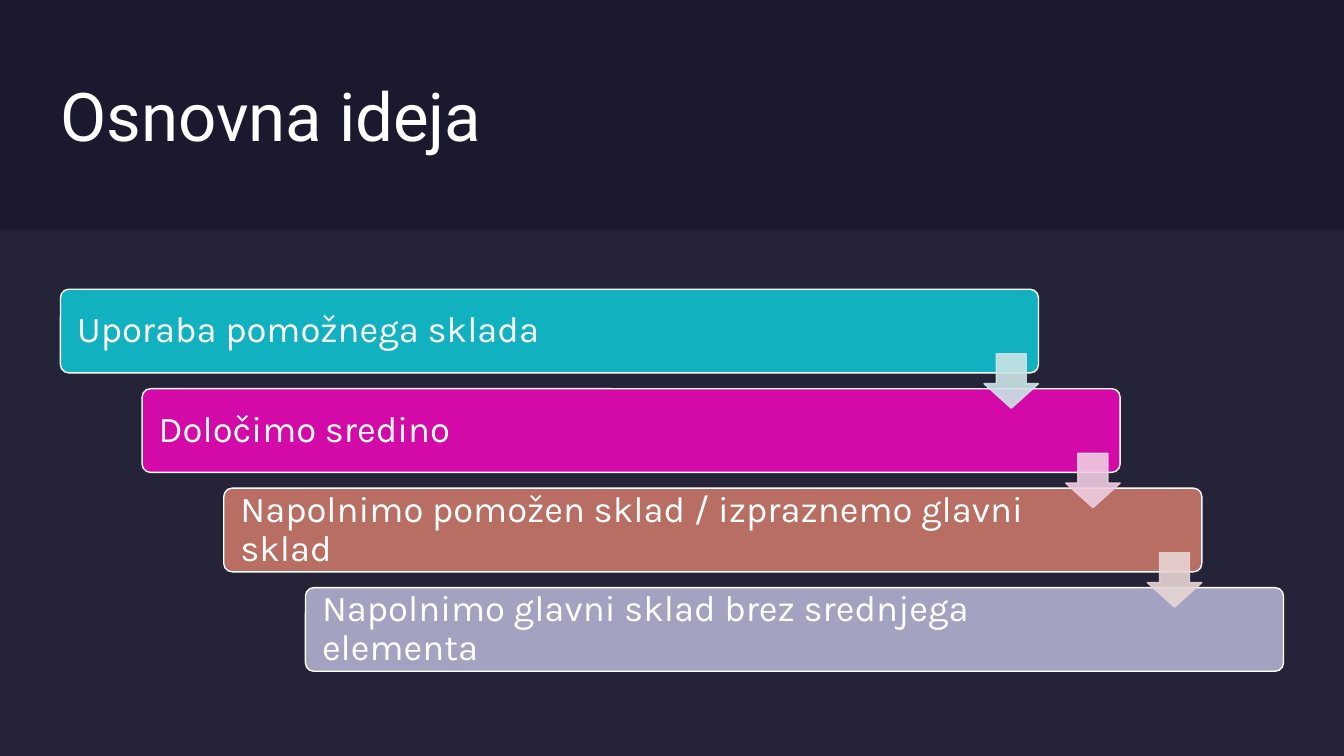
from pptx import Presentation
from pptx import util as u
from pptx.dml.color import RGBColor
from pptx.enum import shapes, text
from pptx.oxml.ns import qn
from lxml import etree

COLORS = {
    "night": "1B192E", "panel": "E4E3F0", "white": "FFFFFF",
    "teal": "12B1BF", "magenta": "D40AA8", "clay": "B86E62", "lilac": "A3A3C1",
    "pale_teal": "CCE4E8", "pale_magenta": "EFCCE1", "pale_clay": "E6D5D3",
}
STEPS = [
    ("Uporaba pomožnega sklada", "teal", "pale_teal"),
    ("Določimo sredino", "magenta", "pale_magenta"),
    ("Napolnimo pomožen sklad / izpraznemo glavni sklad", "clay", "pale_clay"),
    ("Napolnimo glavni sklad brez srednjega elementa", "lilac", None),
]
LEFT, TOP = 0.6, 2.87
STEP_X, STEP_Y = 0.81, (5.83 - TOP) / 3


class StepSlide:
    title_font, body_font = "Roboto", "Karla"

    def __init__(self, prs):
        self.s = prs.slides.add_slide(prs.slide_layouts[5])
        self.paint(self.s.background.fill, "night")

    def paint(self, fill, color, opacity=100):
        fill.solid()
        fill.fore_color.rgb = RGBColor.from_string(COLORS[color])
        if opacity < 100:
            clr = fill._xPr.find(qn("a:solidFill"))[0]
            etree.SubElement(clr, qn("a:alpha"), val=str(opacity * 1000))

    def add_text(self, p, words, font, size):
        p.alignment = text.PP_ALIGN.LEFT
        r = p.add_run()
        r.text = words
        r.font.name, r.font.size = font, u.Pt(size)
        self.paint(r.font.fill, "white")

    def frame(self, sp, left, top, right, bottom):
        tf = sp.text_frame
        tf.word_wrap = True
        tf.auto_size = text.MSO_AUTO_SIZE.NONE
        tf.vertical_anchor = text.MSO_ANCHOR.MIDDLE
        tf.margin_left, tf.margin_top = u.Inches(left), u.Inches(top)
        tf.margin_right, tf.margin_bottom = u.Inches(right), u.Inches(bottom)
        return tf.paragraphs[0]

    def title(self, words, x, y, w, h):
        sp = self.s.shapes.title
        sp.left, sp.top = u.Inches(x), u.Inches(y)
        sp.width, sp.height = u.Inches(w), u.Inches(h)
        self.add_text(self.frame(sp, 0, 0, 0, 0), words, self.title_font, 48)

    def shape(self, kind, x, y, w, h, color, opacity=100, line=None, adjust=()):
        sp = self.s.shapes.add_shape(
            kind, u.Inches(x), u.Inches(y), u.Inches(w), u.Inches(h))
        sp.shadow.inherit = False
        for i, value in enumerate(adjust):
            sp.adjustments[i] = value
        self.paint(sp.fill, color, opacity)
        if line:
            sp.line.width = u.Pt(1)
            self.paint(sp.line.fill, line, opacity)
        else:
            sp.line.fill.background()
        return sp

    def step(self, words, x, y, color):
        sp = self.shape(shapes.MSO_SHAPE.ROUNDED_RECTANGLE, x, y, 9.7, 0.83,
                        color, line="white", adjust=[0.1])
        p = self.frame(sp, 0.14, 0.13, 1.48, 0.13)
        p.line_spacing = 0.9
        self.add_text(p, words, self.body_font, 26)

    def arrow(self, x, y, color):
        self.shape(shapes.MSO_SHAPE.DOWN_ARROW, x, y, 0.54, 0.54,
                   color, opacity=90, line=color, adjust=[0.55, 0.45])


def main():
    prs = Presentation()
    prs.slide_width, prs.slide_height = u.Inches(13.33), u.Inches(7.5)
    slide = StepSlide(prs)
    slide.title("Osnovna ideja", LEFT, 0.6, 7.99, 1.08)
    slide.shape(shapes.MSO_SHAPE.RECTANGLE, 0, 2.28, 13.33, 5.22, "panel", opacity=5)
    places = [(LEFT + i * STEP_X, TOP + i * STEP_Y) for i in range(len(STEPS))]
    for (words, color, _), (x, y) in zip(STEPS, places):
        slide.step(words, x, y, color)
    for (_, _, pale), (x, y) in zip(STEPS, places):
        if pale:
            slide.arrow(x + 9.16, y + 0.64, pale)
    prs.save("out.pptx")


if __name__ == "__main__":
    main()
